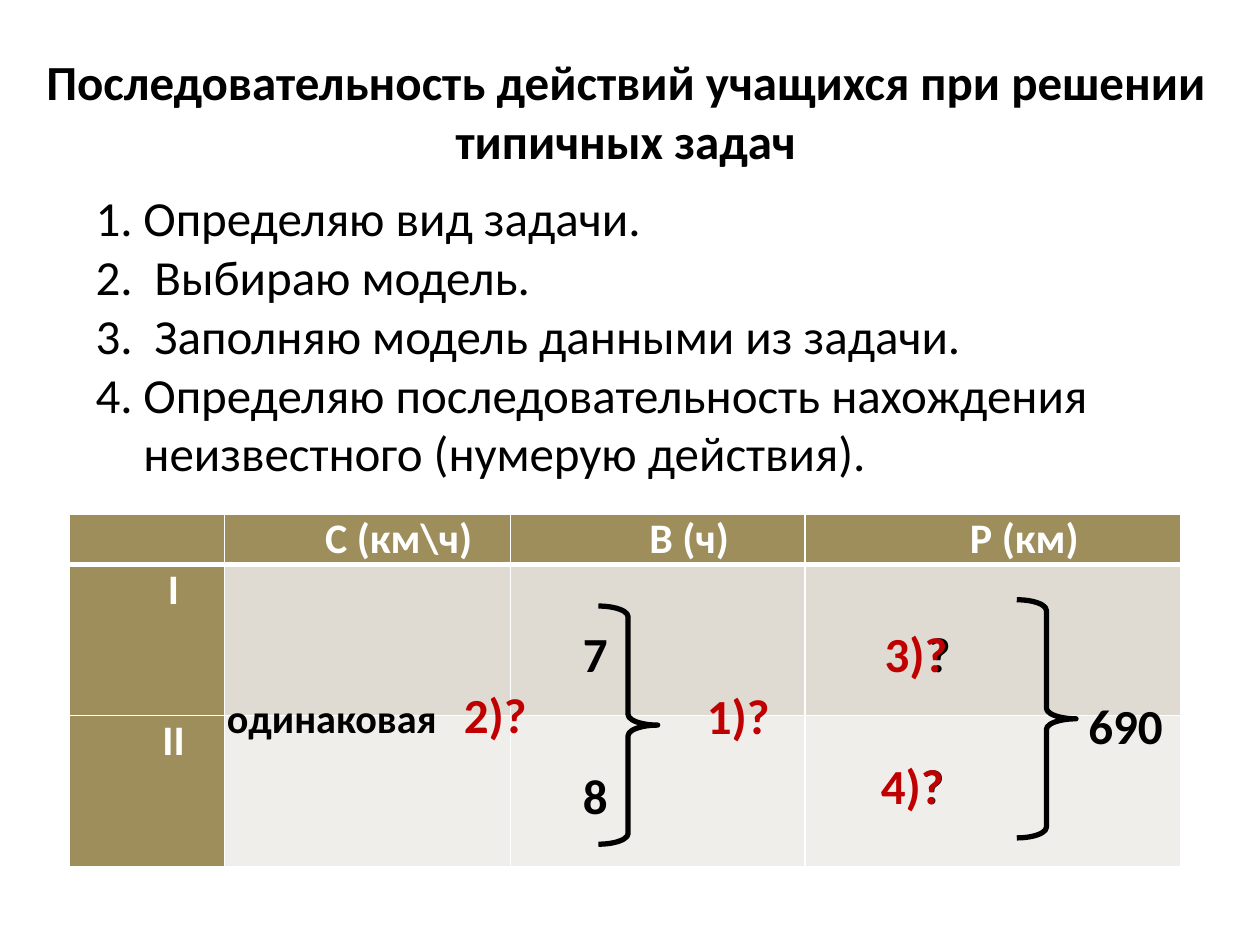
from lxml.etree import SubElement
from pptx import Presentation
from pptx.dml.color import RGBColor
from pptx.enum.shapes import MSO_SHAPE
from pptx.enum.text import PP_ALIGN
from pptx.oxml.ns import qn
from pptx.util import Inches, Pt

BLACK, WHITE, RED = "000000", "FFFFFF", "C00000"
HEADER_FILL = "9E8E5C"
ROW_FILLS = [HEADER_FILL, "DFDBD2", "F0EEEA"]

TITLE = "Последовательность действий учащихся при решении типичных задач"
STEPS = [
    "Определяю вид задачи.",
    " Выбираю модель.",
    " Заполняю модель данными из задачи.",
    "Определяю последовательность нахождения неизвестного (нумерую действия).",
]
TABLE_ROWS = [
    ["", "С (км\\ч)", "В (ч)", "Р (км)"],
    ["I ", "", "", ""],
    ["II ", "", "", ""],
]
COLUMN_WIDTHS = [1.23, 2.27, 2.34, 2.98]
ROW_HEIGHTS = [0.4, 1.2, 1.2]
BRACES = [(8.07, 4.76), (4.75, 4.81)]
VALUES = [
    ("7", 4.29, 4.9, 0.87),
    ("8", 4.29, 6.03, 0.87),
    ("?", 7.02, 4.9, 0.87),
    ("?", 6.97, 5.95, 0.87),
]
ACTIONS = [
    ("1)?", 5.39, 5.39, 0.94),
    ("2)?", 3.57, 5.38, 0.72),
    ("3)?", 6.91, 4.9, 0.72),
    ("4)?", 6.88, 5.95, 0.72),
]


def rgb(color):
    return RGBColor.from_string(color)


def write(paragraph, text, size=28, color=BLACK, bold=True, align=PP_ALIGN.CENTER):
    paragraph.alignment = align
    run = paragraph.add_run()
    run.text = text
    run.font.name = "Calibri"
    run.font.size = Pt(size)
    run.font.bold = bold
    run.font.color.rgb = rgb(color)


def add_frame(slide, left, top, width, height):
    box = slide.shapes.add_textbox(Inches(left), Inches(top), Inches(width), Inches(height))
    box.text_frame.word_wrap = True
    return box.text_frame


def add_label(slide, text, left, top, width, height=0.57, **text_format):
    frame = add_frame(slide, left, top, width, height)
    write(frame.paragraphs[0], text, **text_format)


def add_steps(slide):
    frame = add_frame(slide, 0.66, 1.44, 8.82, 2.93)
    for index, step in enumerate(STEPS):
        paragraph = frame.add_paragraph() if index else frame.paragraphs[0]
        properties = paragraph._p.get_or_add_pPr()
        properties.set("marL", str(Inches(0.38)))
        properties.set("indent", str(Inches(-0.38)))
        SubElement(properties, qn("a:buFont"), typeface="+mj-lt")
        SubElement(properties, qn("a:buAutoNum"), type="arabicPeriod")
        write(paragraph, step, bold=False, align=PP_ALIGN.LEFT)


def set_borders(cell, **widths):
    properties = cell._tc.get_or_add_tcPr()
    for side in "LRTB":
        line = SubElement(properties, qn(f"a:ln{side}"), w=str(Pt(widths.get(side, 1))))
        fill = SubElement(line, qn("a:solidFill"))
        SubElement(fill, qn("a:srgbClr"), val=WHITE)


def add_model_table(slide):
    table = slide.shapes.add_table(
        len(ROW_HEIGHTS), len(COLUMN_WIDTHS), Inches(0.55), Inches(4.08),
        Inches(sum(COLUMN_WIDTHS)), Inches(sum(ROW_HEIGHTS)),
    ).table
    for column, width in zip(table.columns, COLUMN_WIDTHS):
        column.width = Inches(width)
    for row, height in zip(table.rows, ROW_HEIGHTS):
        row.height = Inches(height)
    for row_index, texts in enumerate(TABLE_ROWS):
        for column_index, text in enumerate(texts):
            cell = table.cell(row_index, column_index)
            set_borders(cell, T=3 if row_index == 1 else 1, B=3 if row_index == 0 else 1)
            cell.fill.solid()
            cell.fill.fore_color.rgb = rgb(ROW_FILLS[row_index] if column_index else HEADER_FILL)
            cell.margin_left = cell.margin_right = Inches(0.08)
            cell.margin_top = cell.margin_bottom = 0
            if text:
                paragraph = cell.text_frame.paragraphs[0]
                paragraph._p.get_or_add_pPr().set("marL", str(Inches(0.5)))
                write(paragraph, text, size=24, color=WHITE)


def add_brace(slide, left, top):
    brace = slide.shapes.add_shape(
        MSO_SHAPE.RIGHT_BRACE, Inches(left), Inches(top), Inches(0.47), Inches(1.89))
    brace.adjustments[0] = 0.18
    brace.adjustments[1] = 0.5
    brace.shadow.inherit = False
    brace.fill.background()
    brace.line.color.rgb = rgb(BLACK)
    brace.line.width = Pt(3)


def main():
    presentation = Presentation()
    presentation.slide_width, presentation.slide_height = Inches(10), Inches(7.5)
    slide = presentation.slides.add_slide(presentation.slide_layouts[6])
    add_label(slide, TITLE, 0.12, 0.36, 9.69, 1.04)
    add_steps(slide)
    add_model_table(slide)
    for left, top in BRACES:
        add_brace(slide, left, top)
    add_label(slide, "одинаковая", 1.61, 5.45, 2.05, 0.5, size=23)
    add_label(slide, "690", 8.54, 5.47, 0.87, align=PP_ALIGN.LEFT)
    for value in VALUES:
        add_label(slide, *value)
    for action in ACTIONS:
        add_label(slide, *action, color=RED)
    presentation.save("out.pptx")


if __name__ == "__main__":
    main()
